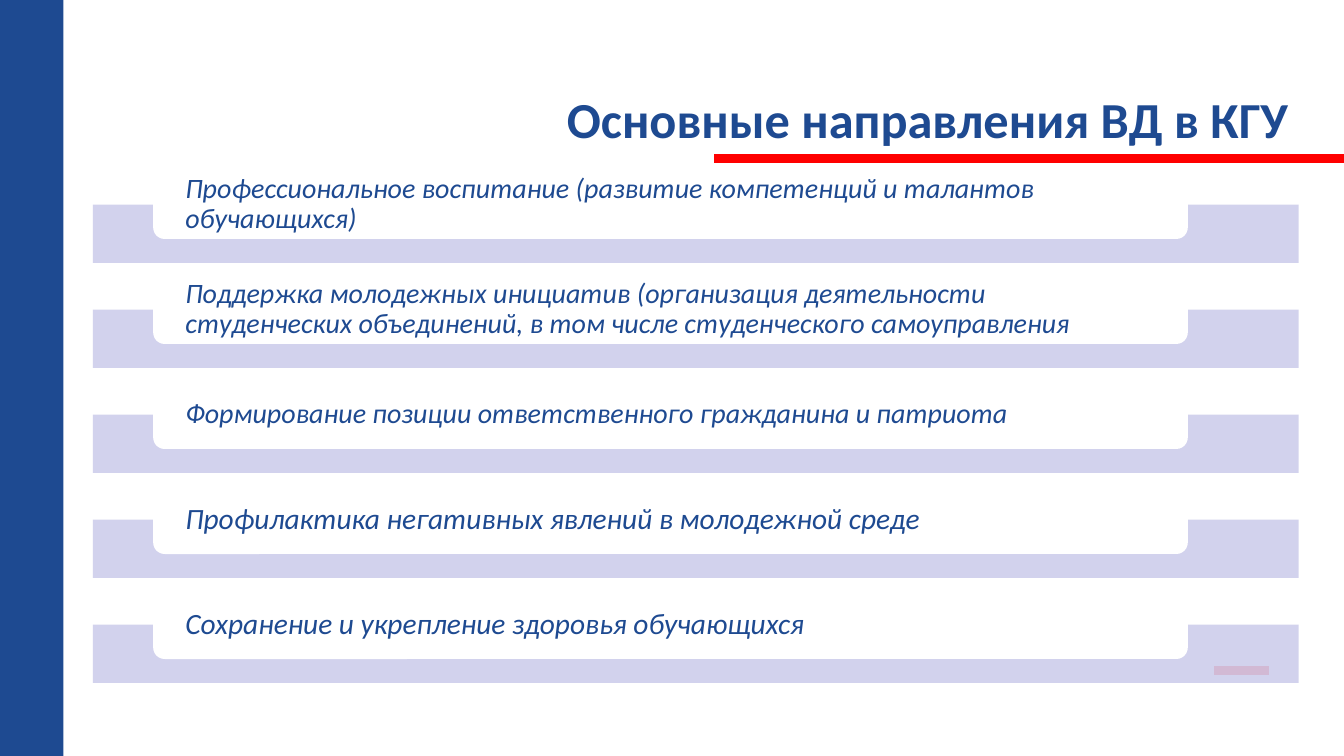
from lxml.etree import SubElement
from pptx import Presentation
from pptx.dml.color import RGBColor
from pptx.enum.shapes import MSO_CONNECTOR as Connector, MSO_SHAPE as Shape
from pptx.enum.text import MSO_ANCHOR as Anchor, PP_ALIGN as Align
from pptx.oxml.ns import qn
from pptx.util import Pt

TITLE = "Основные направления ВД в КГУ"
DIRECTIONS = [  # text, font size
    ("Профессиональное воспитание (развитие компетенций и талантов обучающихся)", 20),
    ("Поддержка молодежных инициатив (организация деятельности "
     "студенческих объединений, в том числе студенческого самоуправления", 20),
    ("Формирование позиции ответственного гражданина и патриота", 20),
    ("Профилактика негативных явлений в молодежной среде", 21),
    ("Сохранение и укрепление здоровья обучающихся", 21),
]
COLORS = {"navy": "1E4A91", "red": "FF0000", "lilac": "CECEEC", "white": "FFFFFF"}
FONT = "Calibri"
WIDTH, HEIGHT = 960.5, 540
RED_LINES = [(510.5, 113.3, WIDTH, 113.3), (867.6, 479, 907.2, 479)]
BAND_LEFT, BAND_TOP, BAND_WIDTH, BAND_HEIGHT = 66.4, 146.2, 861.8, 41.6
CARD_LEFT, CARD_WIDTH, CARD_HEIGHT = 109.5, 739.4, 49
CARD_RISE = 24.5  # how far a card stands above its band
PITCH = 75
CARD_INSET = 20.6


def color(name):
    return RGBColor.from_string(COLORS[name])


def add_red_line(slide, ends):
    line = slide.shapes.add_connector(Connector.STRAIGHT, *map(Pt, ends))
    line.line.color.rgb = color("red")
    line.line.width = Pt(6)
    SubElement(line._element.spPr, qn("a:effectLst"))


def add_block(slide, kind, fill, *frame):
    block = slide.shapes.add_shape(kind, *map(Pt, frame))
    block.shadow.inherit = False
    block.fill.solid()
    block.fill.fore_color.rgb = color(fill)
    block.line.fill.background()
    return block


def write(box, text, size, anchor, align, side, edge):
    """Fill a box with one paragraph, inset by side and edge."""
    frame = box.text_frame
    frame.word_wrap = True
    frame.vertical_anchor = anchor
    frame.margin_left = frame.margin_right = Pt(side)
    frame.margin_top = frame.margin_bottom = Pt(edge)
    frame.text = text
    para = frame.paragraphs[0]
    para.alignment = align
    para.line_spacing = 0.9
    font = para.runs[0].font
    font.name, font.size = FONT, Pt(size)
    font.color.rgb = color("navy")
    return font


def add_direction(slide, top, text, size):
    band = add_block(slide, Shape.RECTANGLE, "lilac",
                     BAND_LEFT, top, BAND_WIDTH, BAND_HEIGHT)
    band_color = band._element.spPr.find(qn("a:solidFill"))[0]
    SubElement(band_color, qn("a:alpha"), val="90000")
    card = add_block(slide, Shape.ROUNDED_RECTANGLE, "white",
                     CARD_LEFT, top - CARD_RISE, CARD_WIDTH, CARD_HEIGHT)
    write(card, text, size, Anchor.MIDDLE, Align.LEFT, CARD_INSET, 0).italic = True


def main():
    deck = Presentation()
    deck.slide_width, deck.slide_height = Pt(WIDTH), Pt(HEIGHT)
    slide = deck.slides.add_slide(deck.slide_layouts[6])

    for ends in RED_LINES:
        add_red_line(slide, ends)
    add_block(slide, Shape.RECTANGLE, "navy", 0, 0, 45.4, HEIGHT)
    title = slide.shapes.add_textbox(Pt(395.3), Pt(0), Pt(532.8), Pt(110.2))
    write(title, TITLE, 36, Anchor.BOTTOM, Align.RIGHT, 7.2, 3.6).bold = True
    for row, (text, size) in enumerate(DIRECTIONS):
        add_direction(slide, BAND_TOP + row * PITCH, text, size)

    deck.save("out.pptx")


if __name__ == "__main__":
    main()
